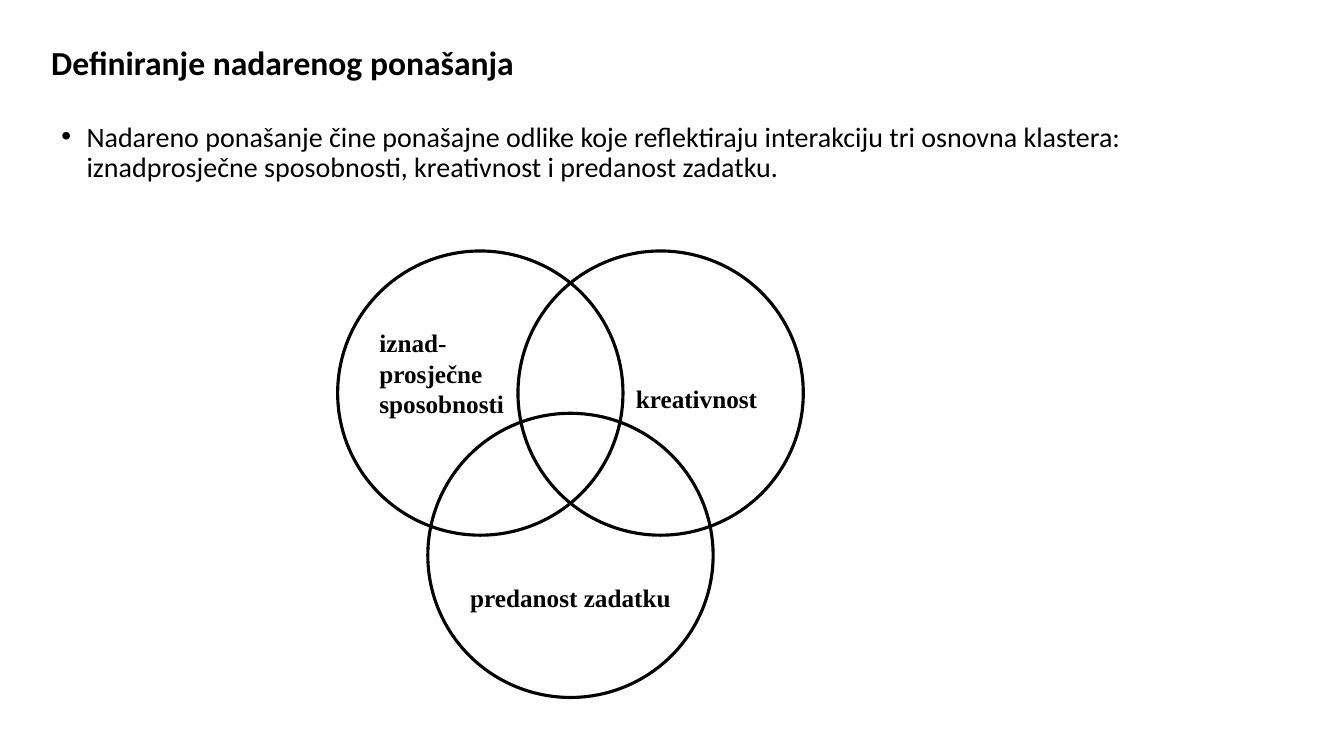
from lxml import etree
from pptx import Presentation
from pptx.dml.color import RGBColor
from pptx.enum.shapes import MSO_SHAPE as Shape
from pptx.enum.text import MSO_ANCHOR as Anchor, PP_ALIGN as Align
from pptx.oxml.ns import qn
from pptx.util import Pt

TITLE = "Definiranje nadarenog ponašanja"
DEFINITION = (
    "Nadareno ponašanje čine ponašajne odlike koje reflektiraju interakciju "
    "tri osnovna klastera: iznadprosječne sposobnosti, kreativnost i "
    "predanost zadatku."
)
# label lines, column in half steps, row, alignment, left inset, top inset
CLUSTERS = [
    (["kreativnost"], 2, 0, Align.LEFT, 54.4, 65),
    (["predanost zadatku"], 1, 1, Align.CENTER, 0, 91),
    (["iznad-", "prosječne", "sposobnosti"], 0, 0, Align.LEFT, 0, 25),
]
BLACK = "000000"
VENN_LEFT, VENN_TOP = 241.2, 179.3
COLUMN_STEP, ROW_STEP = 64.4, 115.9
CIRCLE_WIDTH, CIRCLE_HEIGHT = 203.8, 203


def color(hex_code):
    return RGBColor.from_string(hex_code)


def style(paragraph, font_name, size, bold):
    font = paragraph.font
    font.name, font.size, font.bold = font_name, Pt(size), bold
    font.color.rgb = color(BLACK)


def add_text(slide, text, left, top, width, height, size, bold, anchor):
    """Add a wrapped Calibri text box and return its paragraph."""
    box = slide.shapes.add_textbox(Pt(left), Pt(top), Pt(width), Pt(height))
    frame = box.text_frame
    frame.word_wrap = True
    frame.vertical_anchor = anchor
    paragraph = frame.paragraphs[0]
    paragraph.text = text
    paragraph.line_spacing = 0.9
    style(paragraph, "Calibri", size, bold)
    return paragraph


def add_bullet(paragraph, indent):
    properties = paragraph._p.get_or_add_pPr()
    properties.set("marL", str(Pt(indent)))
    properties.set("indent", str(-Pt(indent)))
    font = etree.SubElement(properties, qn("a:buFont"))
    font.set("typeface", "Arial")
    bullet = etree.SubElement(properties, qn("a:buChar"))
    bullet.set("char", "•")
    # The schema wants default run properties after the bullet.
    defaults = properties.find(qn("a:defRPr"))
    if defaults is not None:
        properties.append(defaults)


def add_cluster(venn, lines, column, row, alignment, inset_left, inset_top):
    circle = venn.shapes.add_shape(
        Shape.OVAL,
        Pt(VENN_LEFT + column * COLUMN_STEP),
        Pt(VENN_TOP + row * ROW_STEP),
        Pt(CIRCLE_WIDTH),
        Pt(CIRCLE_HEIGHT),
    )
    circle.shadow.inherit = False
    circle.fill.background()
    circle.line.color.rgb = color(BLACK)
    circle.line.width = Pt(2.25)

    frame = circle.text_frame
    frame.word_wrap = True
    frame.vertical_anchor = Anchor.TOP
    frame.margin_left, frame.margin_top = Pt(inset_left), Pt(inset_top)
    frame.margin_right = frame.margin_bottom = 0
    frame.text = "\n".join(lines)
    for paragraph in frame.paragraphs:
        paragraph.alignment = alignment
        style(paragraph, "Times New Roman", 18, True)


def main():
    deck = Presentation()
    deck.slide_width, deck.slide_height = Pt(960), Pt(540)
    slide = deck.slides.add_slide(deck.slide_layouts[6])

    add_text(slide, TITLE, 29.5, 14.4, 648, 63.4, 24, True, Anchor.MIDDLE)
    definition = add_text(
        slide, DEFINITION, 36.7, 84.2, 848.2, 106.6, 20, False, Anchor.TOP
    )
    definition.space_before = Pt(10)
    add_bullet(definition, 18)

    venn = slide.shapes.add_group_shape()
    for cluster in CLUSTERS:
        add_cluster(venn, *cluster)

    deck.save("out.pptx")


if __name__ == "__main__":
    main()
